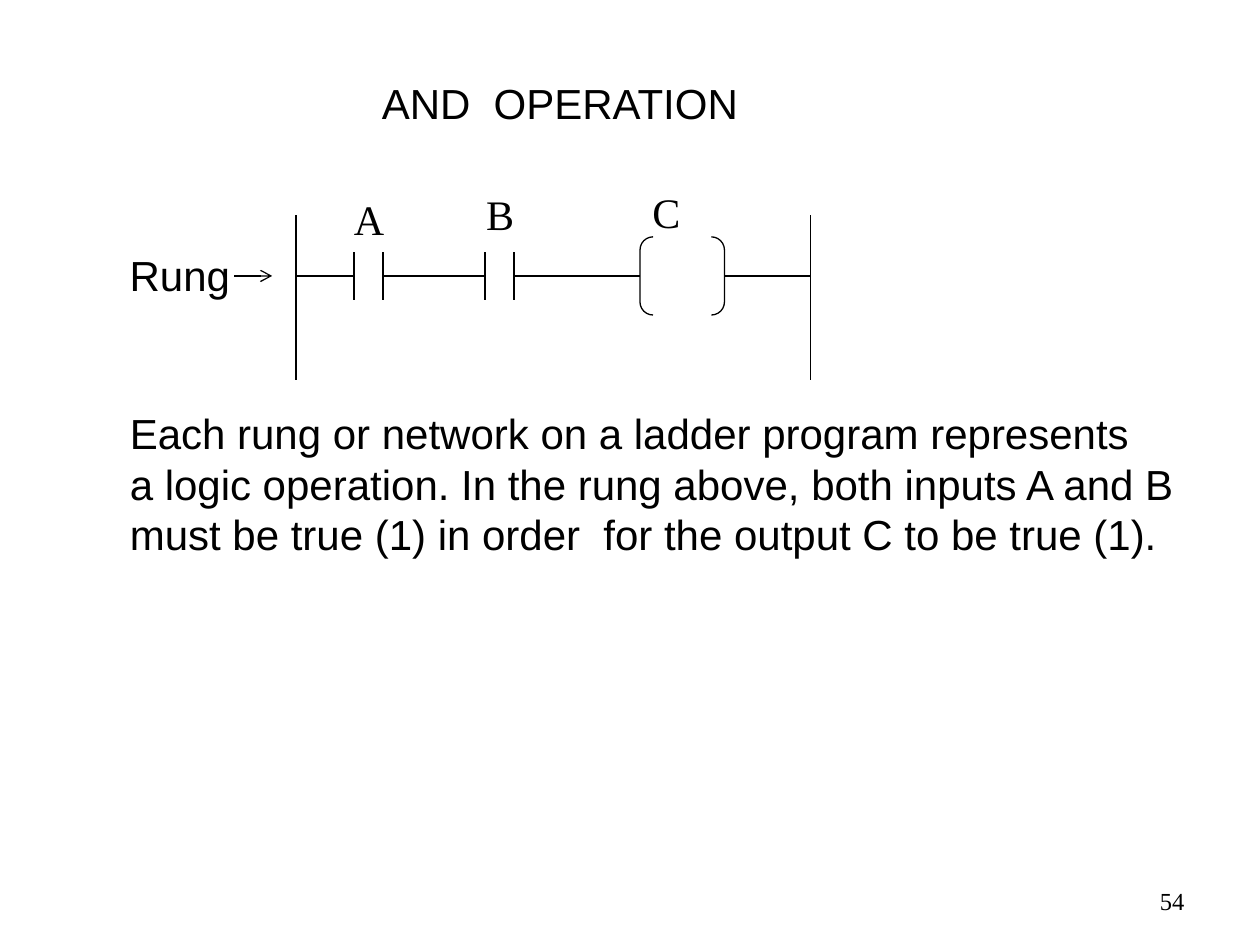
from dataclasses import dataclass
from lxml.etree import SubElement
from pptx import Presentation
from pptx.dml.color import RGBColor
from pptx.enum.shapes import MSO_CONNECTOR, MSO_SHAPE
from pptx.enum.text import MSO_ANCHOR, MSO_AUTO_SIZE, PP_ALIGN
from pptx.oxml.ns import qn
from pptx.util import Pt

PX = 9144  # 100 px to the inch


@dataclass
class Theme:
    ink: RGBColor = RGBColor(0, 0, 0)
    sans: str = "Arial"
    serif: str = "Times New Roman"
    text: float = 24
    small: float = 14
    lead: float = 29
    line: float = 0.75


theme = Theme()


def place(shape, box):
    for name, val in zip(("left", "top", "width", "height"), box):
        setattr(shape, name, val * PX)


def write(shape, box, lines, font, size=theme.text, lead=None, **extra):
    """Fill a text box or placeholder with plain lines."""
    place(shape, box)
    frame = shape.text_frame
    look = {"auto_size": MSO_AUTO_SIZE.NONE, "word_wrap": False,
            "vertical_anchor": MSO_ANCHOR.TOP,
            "margin_left": 10 * PX, "margin_right": 10 * PX,
            "margin_top": 5 * PX, "margin_bottom": 5 * PX}
    for name, val in {**look, **extra.get("frame", {})}.items():
        setattr(frame, name, val)
    frame.text = "\n".join(lines)
    form = {"alignment": extra.get("align", PP_ALIGN.LEFT),
            "space_before": Pt(0), "line_spacing": lead and Pt(lead)}
    style = {"name": font, "size": Pt(size), "bold": False}
    for para in frame.paragraphs:
        for name, val in form.items():
            setattr(para, name, val)
        for run in para.runs:
            for name, val in style.items():
                setattr(run.font, name, val)
            run.font.color.rgb = theme.ink


def label(slide, box, text, font, size=theme.text, **extra):
    write(slide.shapes.add_textbox(0, 0, 0, 0), box, [text], font, size, **extra)


def ink(shape):
    shape.line.color.rgb = theme.ink
    shape.line.width = Pt(theme.line)


def wire(slide, x1, y1, x2, y2):
    link = slide.shapes.add_connector(
        MSO_CONNECTOR.STRAIGHT, x1 * PX, y1 * PX, x2 * PX, y2 * PX)
    ink(link)
    SubElement(link._element.spPr, qn("a:effectLst"))
    return link


def head(slide, box):
    write(slide.shapes.title, box, ["AND  OPERATION"], theme.sans, lead=theme.lead)


def note(slide, box):
    body = slide.placeholders[1]
    write(body, box, [
        "Each rung or network on a ladder program represents",
        "a logic operation. In the rung above, both inputs A and B",
        "must be true (1) in order  for the output C to be true (1).",
    ], theme.sans, lead=theme.lead)
    for para in body.text_frame.paragraphs:
        props = para._p.get_or_add_pPr()
        props.set("marL", "0")
        props.set("indent", "0")
        SubElement(props, qn("a:buNone"))


def input_gate(slide, x, mid):
    """Two bars with a lead on each side."""
    plate, gap = 19, 23
    for bar in (x, x + gap):
        wire(slide, bar, mid - plate, bar, mid + plate)
    wire(slide, x - 46, mid, x, mid)
    wire(slide, x + gap, mid, x + gap + 35, mid)


def coil(slide, box, start, end):
    """Bracket pair wired to the gates and to the right rail."""
    pair = slide.shapes.add_shape(MSO_SHAPE.DOUBLE_BRACKET, 0, 0, 0, 0)
    place(pair, box)
    pair.shadow.inherit = False
    pair.fill.background()
    ink(pair)
    left, top, width, height = box
    mid = top + height // 2
    wire(slide, start, mid, left, mid).end_connect(pair, 1)
    wire(slide, left + width, mid, end, mid).begin_connect(pair, 3)


def rung(slide, box):
    left, top, width, height = box
    mid, right = top + 48, left + width
    # Rails
    for x in (left, right):
        wire(slide, x, top, x, top + height)
    # Inputs and output
    for x in (left + 46, left + 150):
        input_gate(slide, x, mid)
    coil(slide, (left + 273, mid - 31, 67, 62), left + 208, right)
    for text, x, y in (("A", 36, -22), ("B", 141, -26), ("C", 273, -28)):
        label(slide, (left + x, top + y, 45, 50), text, theme.serif)
    # Pointer to the rung
    arrow = wire(slide, left - 49, mid, left - 19, mid)
    SubElement(arrow.line._get_or_add_ln(), qn("a:tailEnd"), type="arrow")
    label(slide, (left - 142, mid - 26, 101, 50), "Rung", theme.sans, lead=theme.lead)


def foot(slide, box):
    label(slide, box, "54", theme.serif, theme.small, align=PP_ALIGN.RIGHT,
          frame={"vertical_anchor": MSO_ANCHOR.MIDDLE, "word_wrap": True})


def main():
    deck = Presentation()
    deck.slide_width, deck.slide_height = 1000 * PX, 750 * PX
    slide = deck.slides.add_slide(deck.slide_layouts[1])
    head(slide, (293, 56, 306, 50))
    rung(slide, (235, 171, 408, 131))
    note(slide, (93, 318, 857, 131))
    foot(slide, (717, 695, 233, 40))
    deck.save("out.pptx")


if __name__ == "__main__":
    main()
